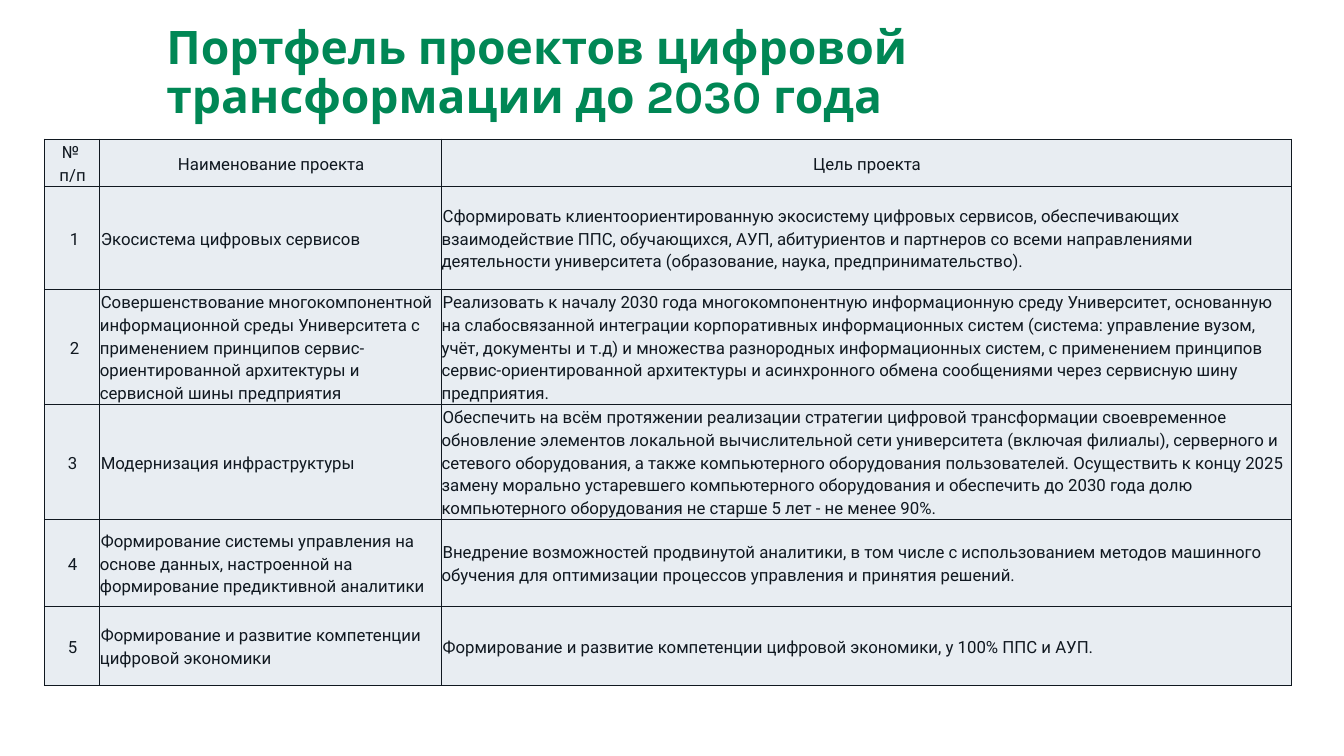
from lxml.etree import SubElement
from pptx import Presentation
from pptx.dml.color import RGBColor as Color
from pptx.enum.text import MSO_ANCHOR as Anchor, MSO_AUTO_SIZE as AutoSize, PP_ALIGN as Align
from pptx.oxml.ns import qn
from pptx.util import Inches, Pt

COLORS = {"title": "008755", "ink": "101820", "cell": "E8EDF2"}
SLIDE_SIZE = (13.33, 7.5)
TITLE_BOX = (1.55, 0.21, 11.02, 1.05)
TABLE_BOX = (0.44, 1.38, 12.37, 5.42)
COLUMN_WIDTHS = (0.55, 3.39, 8.43)
ROW_HEIGHTS = (0.47, 1.02, 1.14, 1.14, 0.86, 0.79)

TITLE = "Портфель проектов цифровой трансформации до 2030 года"
HEADER = (("№ ", "п/п"), ("Наименование проекта",), ("Цель проекта",))
PROJECTS = (
    (" 1", "Экосистема цифровых сервисов",
     "Сформировать клиентоориентированную экосистему цифровых сервисов, обеспечивающих "
     "взаимодействие ППС, обучающихся, АУП, абитуриентов и партнеров со всеми направлениями "
     "деятельности университета (образование, наука, предпринимательство)."),
    (" 2", "Совершенствование многокомпонентной информационной среды Университета с "
     "применением принципов сервис-ориентированной архитектуры и сервисной шины предприятия",
     "Реализовать к началу 2030 года многокомпонентную информационную среду Университет, "
     "основанную на слабосвязанной интеграции корпоративных информационных систем "
     "(система: управление вузом, учёт, документы и т.д) и множества разнородных "
     "информационных систем, с применением принципов сервис-ориентированной архитектуры "
     "и асинхронного обмена сообщениями через сервисную шину предприятия."),
    ("3", "Модернизация инфраструктуры",
     "Обеспечить на всём протяжении реализации стратегии цифровой трансформации своевременное "
     "обновление элементов локальной вычислительной сети университета (включая филиалы), "
     "серверного и сетевого оборудования, а также компьютерного оборудования пользователей. "
     "Осуществить к концу 2025 замену морально устаревшего компьютерного оборудования и "
     "обеспечить до 2030 года долю компьютерного оборудования не старше 5 лет - не менее 90%."),
    ("4", "Формирование системы управления на основе данных, настроенной на формирование "
     "предиктивной аналитики",
     "Внедрение возможностей продвинутой аналитики, в том числе с использованием методов "
     "машинного обучения для оптимизации процессов управления и принятия решений."),
    ("5", "Формирование и развитие компетенции цифровой экономики",
     "Формирование и развитие компетенции цифровой экономики, у 100% ППС и АУП."),
)


def add_run(para, text, font_name, size, color, bold=False):
    run = para.add_run()
    run.text = text
    run.font.name = font_name
    run.font.size = Pt(size)
    run.font.bold = bold
    run.font.color.rgb = Color.from_string(COLORS[color])


def add_title(page, box):
    title = page.shapes.title
    title.left, title.top, title.width, title.height = map(Inches, box)
    frame = title.text_frame
    frame.word_wrap = True
    frame.auto_size = AutoSize.NONE
    frame.vertical_anchor = Anchor.MIDDLE
    para = frame.paragraphs[0]
    para.alignment = Align.LEFT
    para.line_spacing = 0.9
    add_run(para, TITLE, "Karla", 33, "title", bold=True)


def add_borders(cell):
    properties = cell._tc.get_or_add_tcPr()
    for index, side in enumerate(("lnL", "lnR", "lnT", "lnB")):
        line = properties.makeelement(qn(f"a:{side}"), {"w": str(Pt(1))})
        fill = SubElement(line, qn("a:solidFill"))
        SubElement(fill, qn("a:srgbClr"), val=COLORS["ink"])
        properties.insert(index, line)


def fill_cell(cell, lines, centered):
    cell.margin_left = cell.margin_right = 0
    cell.margin_top = cell.margin_bottom = Inches(0.01)
    cell.vertical_anchor = Anchor.MIDDLE
    cell.fill.solid()
    cell.fill.fore_color.rgb = Color.from_string(COLORS["cell"])
    add_borders(cell)
    frame = cell.text_frame
    for index, text in enumerate(lines):
        para = frame.add_paragraph() if index else frame.paragraphs[0]
        para.alignment = Align.CENTER if centered else Align.LEFT
        para.line_spacing = 1.15
        para._p.get_or_add_pPr().set("indent", str(Inches(0.01)))
        add_run(para, text, "Roboto", 12, "ink")


def add_projects(page, box):
    rows = [HEADER] + [[(text,) for text in project] for project in PROJECTS]
    table = page.shapes.add_table(len(rows), len(HEADER), *map(Inches, box)).table
    table.first_row = table.horz_banding = False
    for column, width in zip(table.columns, COLUMN_WIDTHS):
        column.width = Inches(width)
    for row, height in zip(table.rows, ROW_HEIGHTS):
        row.height = Inches(height)
    for row_index, row in enumerate(rows):
        for column_index, lines in enumerate(row):
            centered = row_index == 0 or column_index == 0
            fill_cell(table.cell(row_index, column_index), lines, centered)


def main():
    deck = Presentation()
    deck.slide_width, deck.slide_height = map(Inches, SLIDE_SIZE)
    page = deck.slides.add_slide(deck.slide_layouts[5])
    add_title(page, TITLE_BOX)
    add_projects(page, TABLE_BOX)
    deck.save("out.pptx")


if __name__ == "__main__":
    main()
